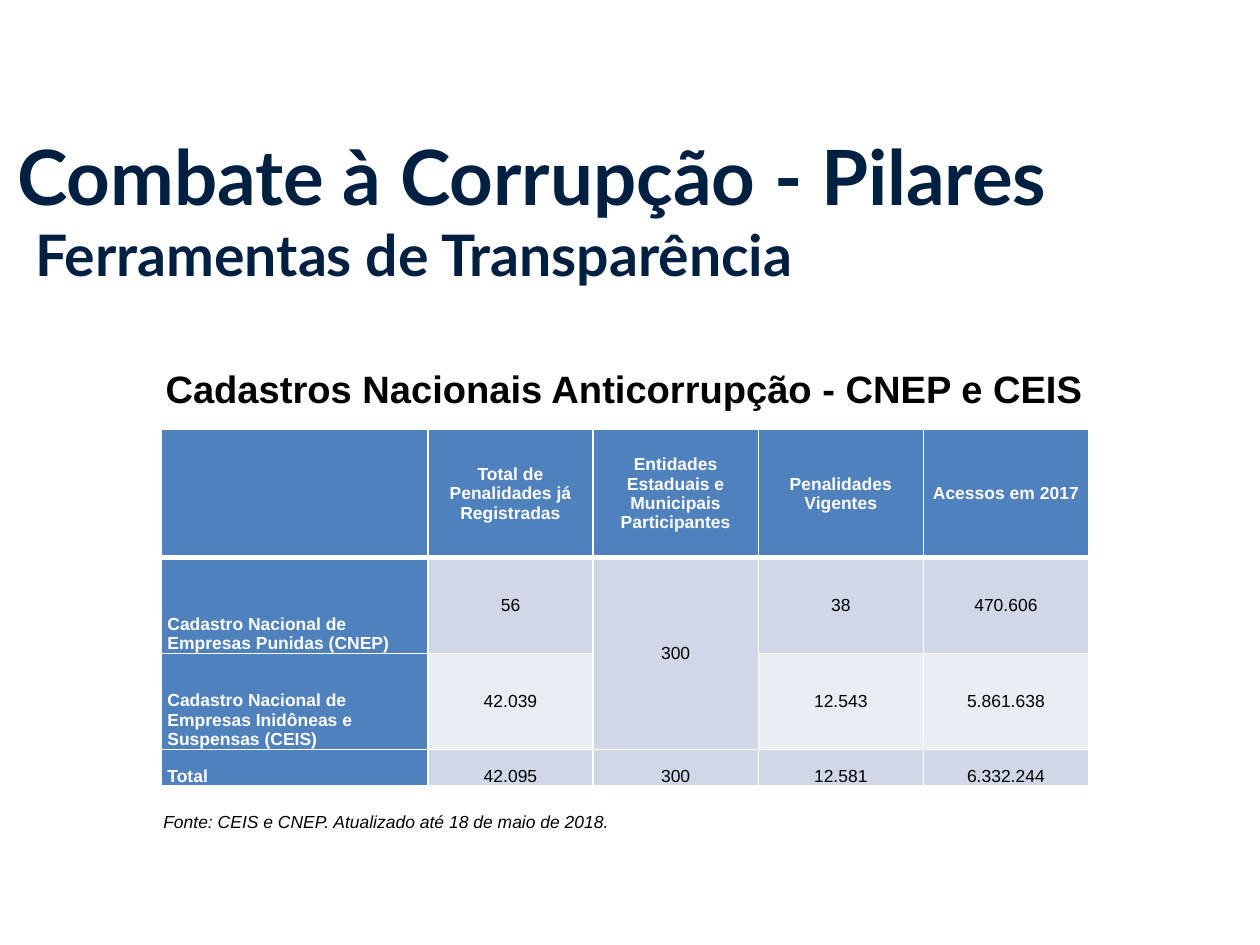
"""Build the slide on anti-corruption registers and save it."""
from lxml import etree
from pptx import Presentation
from pptx.dml.color import RGBColor
from pptx.enum import text
from pptx.oxml import ns
from pptx.util import Cm, Pt

NAVY, BLUE, WHITE, BLACK = "002042", "4F81BD", "FFFFFF", "000000"
BANDS = ["D0D8E8", "E9EDF4", "D0D8E8"]
LEFT, CENTER = text.PP_ALIGN.LEFT, text.PP_ALIGN.CENTER
TOP, MIDDLE, BOTTOM = text.MSO_ANCHOR.TOP, text.MSO_ANCHOR.MIDDLE, text.MSO_ANCHOR.BOTTOM


def write(frame, content, size=11, font="Arial", color=BLACK, bold=False, italic=False, align=LEFT):
    frame.word_wrap = True
    paragraph = frame.paragraphs[0]
    paragraph.alignment = align
    run = paragraph.add_run()
    run.text = content
    run.font.size, run.font.name = Pt(size), font
    run.font.bold, run.font.italic = bold, italic
    run.font.color.rgb = RGBColor.from_string(color)


def add_border(cell, side, width):
    properties = cell._tc.get_or_add_tcPr()
    line = etree.SubElement(properties, ns.qn(f"a:ln{side}"), w=str(Pt(width)))
    fill = etree.SubElement(line, ns.qn("a:solidFill"))
    etree.SubElement(fill, ns.qn("a:srgbClr"), val=WHITE)


presentation = Presentation()
presentation.slide_width, presentation.slide_height = Cm(28), Cm(21)
slide = presentation.slides.add_slide(presentation.slide_layouts[5])

title = slide.shapes.title
title.left, title.top, title.width, title.height = Cm(0.13), Cm(2.74), Cm(27.25), Cm(2.31)
title.text_frame.auto_size = text.MSO_AUTO_SIZE.NONE
title.text_frame.vertical_anchor = TOP
write(title.text_frame, "Combate à Corrupção - Pilares", size=48, font="Lato", color=NAVY, bold=True)

subtitle = slide.shapes.add_textbox(Cm(0.53), Cm(4.75), Cm(21.06), Cm(2.82))
write(subtitle.text_frame, "Ferramentas de Transparência", size=36, font="Lato", color=NAVY, bold=True)

heading = slide.shapes.add_textbox(Cm(2.78), Cm(8), Cm(22.17), Cm(1.27))
write(heading.text_frame, "Cadastros Nacionais Anticorrupção - CNEP e CEIS", size=24, bold=True, align=CENTER)

source = slide.shapes.add_textbox(Cm(3.38), Cm(17.91), Cm(12.32), Cm(0.8))
write(source.text_frame, "Fonte: CEIS e CNEP. Atualizado até 18 de maio de 2018.", italic=True)

rows = [
    ["", "Total de Penalidades já Registradas", "Entidades Estaduais e Municipais Participantes",
     "Penalidades Vigentes", "Acessos em 2017"],
    ["Cadastro Nacional de Empresas Punidas (CNEP)", "56", "300", "38", "470.606"],
    ["Cadastro Nacional de Empresas Inidôneas e Suspensas (CEIS)", "42.039", "", "12.543", "5.861.638"],
    ["Total", "42.095", "300", "12.581", "6.332.244"],
]
column_widths = [5.92] + [3.67] * 4
row_heights = [2.84, 2.13, 2.13, 0.81]
table = slide.shapes.add_table(
    len(rows), len(column_widths), Cm(3.59), Cm(9.55), Cm(sum(column_widths)), Cm(sum(row_heights))
).table
for column, width in zip(table.columns, column_widths):
    column.width = Cm(width)
for row, height in zip(table.rows, row_heights):
    row.height = Cm(height)

for row_index, values in enumerate(rows):
    for column_index, value in enumerate(values):
        cell = table.cell(row_index, column_index)
        is_header, is_label = row_index == 0, column_index == 0
        cell.margin_left = cell.margin_right = Cm(0.13)
        cell.margin_top = cell.margin_bottom = 0
        cell.vertical_anchor = BOTTOM if is_label or row_index == 3 else MIDDLE
        for side in "LRTB":
            under_header = (row_index, side) in [(0, "B"), (1, "T")]
            add_border(cell, side, 3 if under_header else 1)
        cell.fill.solid()
        fill_color = BLUE if is_header or is_label else BANDS[row_index - 1]
        cell.fill.fore_color.rgb = RGBColor.from_string(fill_color)
        if value:
            write(cell.text_frame, value, color=WHITE if is_header or is_label else BLACK,
                  bold=is_header or is_label, align=LEFT if is_label else CENTER)
table.cell(1, 2).merge(table.cell(2, 2))

presentation.save("out.pptx")
